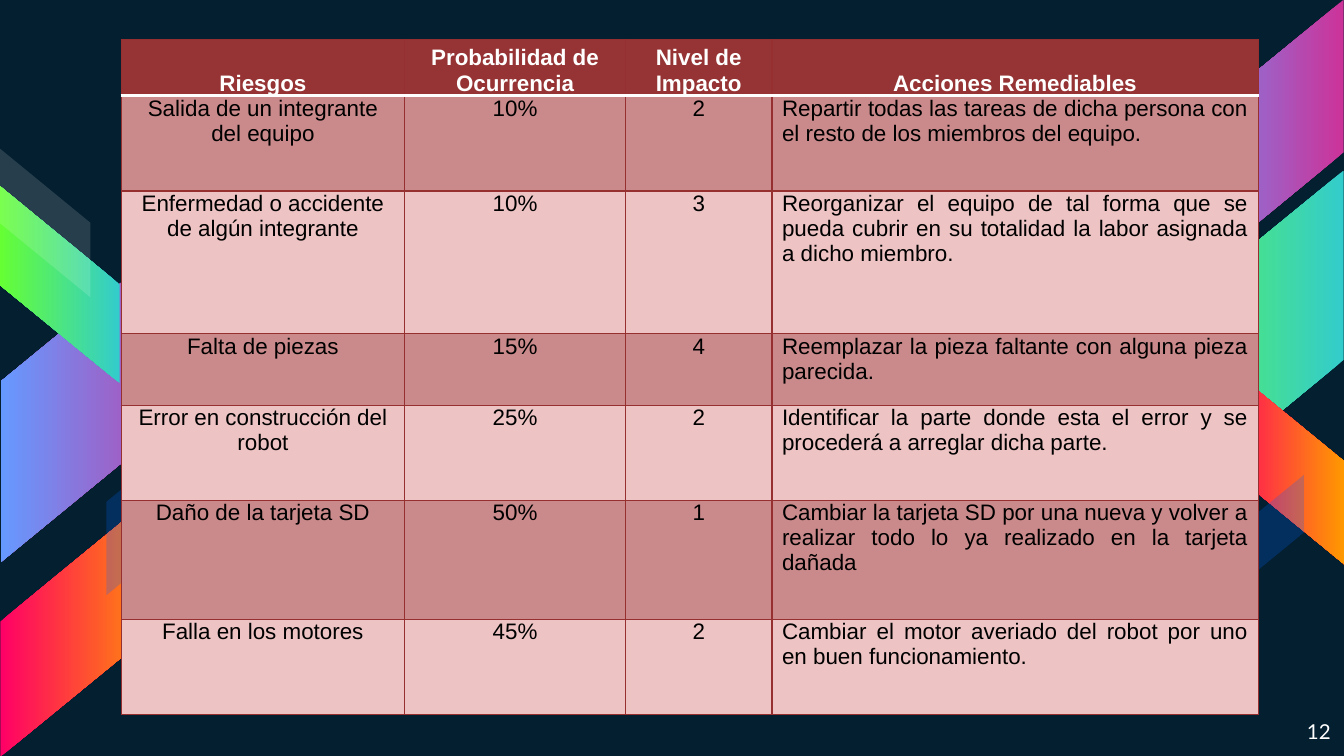
from pptx import Presentation
from pptx.dml.color import RGBColor
from pptx.enum.shapes import MSO_SHAPE
from pptx.enum.text import MSO_ANCHOR, PP_ALIGN
from pptx.oxml.ns import qn
from pptx.util import Cm, Pt
from lxml import etree

PARALLELOGRAM = MSO_SHAPE.PARALLELOGRAM
CENTER, JUSTIFY, RIGHT = PP_ALIGN.CENTER, PP_ALIGN.JUSTIFY, PP_ALIGN.RIGHT
TOP, MIDDLE, BOTTOM = MSO_ANCHOR.TOP, MSO_ANCHOR.MIDDLE, MSO_ANCHOR.BOTTOM

NAVY = RGBColor(0x04, 0x1F, 0x30)
WHITE = RGBColor(0xFF, 0xFF, 0xFF)
BLACK = RGBColor(0x00, 0x00, 0x00)
MAROON = RGBColor(0x96, 0x33, 0x34)
BORDER = RGBColor(0x95, 0x2F, 0x30)
ROSE = RGBColor(0xCA, 0x89, 0x8A)
PINK = RGBColor(0xED, 0xC3, 0xC3)
BLUE = RGBColor(0x00, 0x66, 0xFF)
MAGENTA_BLUE = (RGBColor(0xCC, 0x33, 0x99), RGBColor(0x66, 0x99, 0xFF))
TEAL_GREEN = (RGBColor(0x33, 0xCC, 0xCC), RGBColor(0x66, 0xFF, 0x33))
RED_ORANGE = (RGBColor(0xFF, 0x00, 0x66), RGBColor(0xFF, 0x99, 0x00))

HEADINGS = ("Riesgos", "Probabilidad de Ocurrencia", "Nivel de Impacto", "Acciones Remediables")
RISKS = [
    ("Salida de un integrante del equipo", "10%", "2",
     "Repartir todas las tareas de dicha persona con el resto de los miembros del equipo."),
    ("Enfermedad o accidente de algún integrante", "10%", "3",
     "Reorganizar el equipo de tal forma que se pueda cubrir en su totalidad la labor asignada a dicho miembro."),
    ("Falta de piezas", "15%", "4",
     "Reemplazar la pieza faltante con alguna pieza parecida."),
    ("Error en construcción del robot", "25%", "2",
     "Identificar la parte donde esta el error y se procederá a arreglar dicha parte."),
    ("Daño de la tarjeta SD", "50%", "1",
     "Cambiar la tarjeta SD por una nueva y volver a realizar todo lo ya realizado en la tarjeta dañada"),
    ("Falla en los motores", "45%", "2",
     "Cambiar el motor averiado del robot por uno en buen funcionamiento."),
]
RISK_LINES = (4, 6, 3, 4, 5, 4)
LINE_HEIGHT = 0.45
HEADER_HEIGHT = 1.07
COLUMN_WIDTHS = (5.36, 4.17, 2.77, 9.19)
TABLE_LEFT, TABLE_TOP = 2.29, 0.74

# left, top, length, rotation, mirrored, gradient
RIBBONS = [
    (20.75, 1.12, 5.77, 90, True, MAGENTA_BLUE),
    (19.63, 4.62, 7.16, 90, True, TEAL_GREEN),
    (22.28, 7.54, 3.89, 270, False, RED_ORANGE),
    (-1.32, 5.13, 6.83, 90, True, MAGENTA_BLUE),
    (-0.74, 4.24, 3.73, 90, False, TEAL_GREEN),
    (-0.99, 10.19, 5.11, 270, True, RED_ORANGE),
]
# left, top, length, rotation, mirrored, colour, opacity in percent
GLAZES = [
    (22.89, 9.4, 2.18, 270, True, BLUE, 23),
    (-0.56, 3.35, 2.82, 270, False, WHITE, 14),
    (1.32, 8.41, 3.53, 270, True, BLUE, 23),
]
BREADTH_RATIO = 0.61
SLANT = 0.82


def add_band(slide, left, top, length, rotation, mirrored):
    band = slide.shapes.add_shape(
        PARALLELOGRAM, Cm(left), Cm(top), Cm(length), Cm(length * BREADTH_RATIO))
    band.adjustments[0] = SLANT
    band.rotation = rotation
    band.shadow.inherit = False
    band.line.fill.background()
    if mirrored:
        band._element.spPr.find(qn("a:xfrm")).set("flipH", "1")
    return band


def add_ribbon(slide, *placement, gradient):
    fill = add_band(slide, *placement).fill
    fill.gradient()
    fill.gradient_angle = 270
    for stop, colour in zip(fill.gradient_stops, gradient):
        stop.color.rgb = colour


def add_glaze(slide, *placement, colour, opacity):
    band = add_band(slide, *placement)
    band.fill.solid()
    band.fill.fore_color.rgb = colour
    srgb = band._element.spPr.find(qn("a:solidFill")).find(qn("a:srgbClr"))
    etree.SubElement(srgb, qn("a:alpha")).set("val", str(opacity * 1000))


def set_borders(cell, row):
    edges = {"L": (BORDER, 0.75), "R": (BORDER, 0.75), "T": (BORDER, 0.75), "B": (BORDER, 0.75)}
    if row < 2:
        edges["B" if row == 0 else "T"] = (WHITE, 2)
    properties = cell._tc.get_or_add_tcPr()
    for position, (side, (colour, width)) in enumerate(edges.items()):
        line = etree.Element(qn(f"a:ln{side}"), w=str(Pt(width)))
        solid = etree.SubElement(line, qn("a:solidFill"))
        etree.SubElement(solid, qn("a:srgbClr")).set("val", str(colour))
        properties.insert(position, line)


def fill_cell(cell, text, row, column):
    header = row == 0
    cell.text = text
    cell.margin_left = cell.margin_right = Cm(0.19)
    cell.margin_top = cell.margin_bottom = 0
    cell.vertical_anchor = BOTTOM if header else TOP
    cell.fill.solid()
    cell.fill.fore_color.rgb = MAROON if header else ROSE if row % 2 else PINK
    paragraph = cell.text_frame.paragraphs[0]
    paragraph.alignment = JUSTIFY if column == 3 and not header else CENTER
    paragraph.font.name = "Arial"
    paragraph.font.size = Pt(12)
    paragraph.font.bold = header
    paragraph.font.color.rgb = WHITE if header else BLACK
    set_borders(cell, row)


def add_risk_table(slide):
    rows = [HEADINGS, *RISKS]
    heights = [HEADER_HEIGHT, *(lines * LINE_HEIGHT for lines in RISK_LINES)]
    table = slide.shapes.add_table(
        len(rows), len(HEADINGS), Cm(TABLE_LEFT), Cm(TABLE_TOP),
        Cm(sum(COLUMN_WIDTHS)), Cm(sum(heights))).table
    for column, width in zip(table.columns, COLUMN_WIDTHS):
        column.width = Cm(width)
    for row, height in zip(table.rows, heights):
        row.height = Cm(height)
    for r, texts in enumerate(rows):
        for c, text in enumerate(texts):
            fill_cell(table.cell(r, c), text, r, c)


def add_page_number(slide):
    frame = slide.shapes.add_textbox(Cm(23.77), Cm(13.36), Cm(1.63), Cm(0.91)).text_frame
    frame.word_wrap = True
    frame.vertical_anchor = MIDDLE
    frame.margin_left = frame.margin_right = frame.margin_top = frame.margin_bottom = Cm(0.25)
    frame.text = "12"
    paragraph = frame.paragraphs[0]
    paragraph.alignment = RIGHT
    paragraph.font.name = "Lato"
    paragraph.font.size = Pt(11)
    paragraph.font.color.rgb = WHITE


def main():
    deck = Presentation()
    deck.slide_width, deck.slide_height = Cm(25.4), Cm(14.29)
    slide = deck.slides.add_slide(deck.slide_layouts[6])
    slide.background.fill.solid()
    slide.background.fill.fore_color.rgb = NAVY
    for *placement, gradient in RIBBONS:
        add_ribbon(slide, *placement, gradient=gradient)
    for *placement, colour, opacity in GLAZES:
        add_glaze(slide, *placement, colour=colour, opacity=opacity)
    add_page_number(slide)
    add_risk_table(slide)
    deck.save("out.pptx")


if __name__ == "__main__":
    main()
